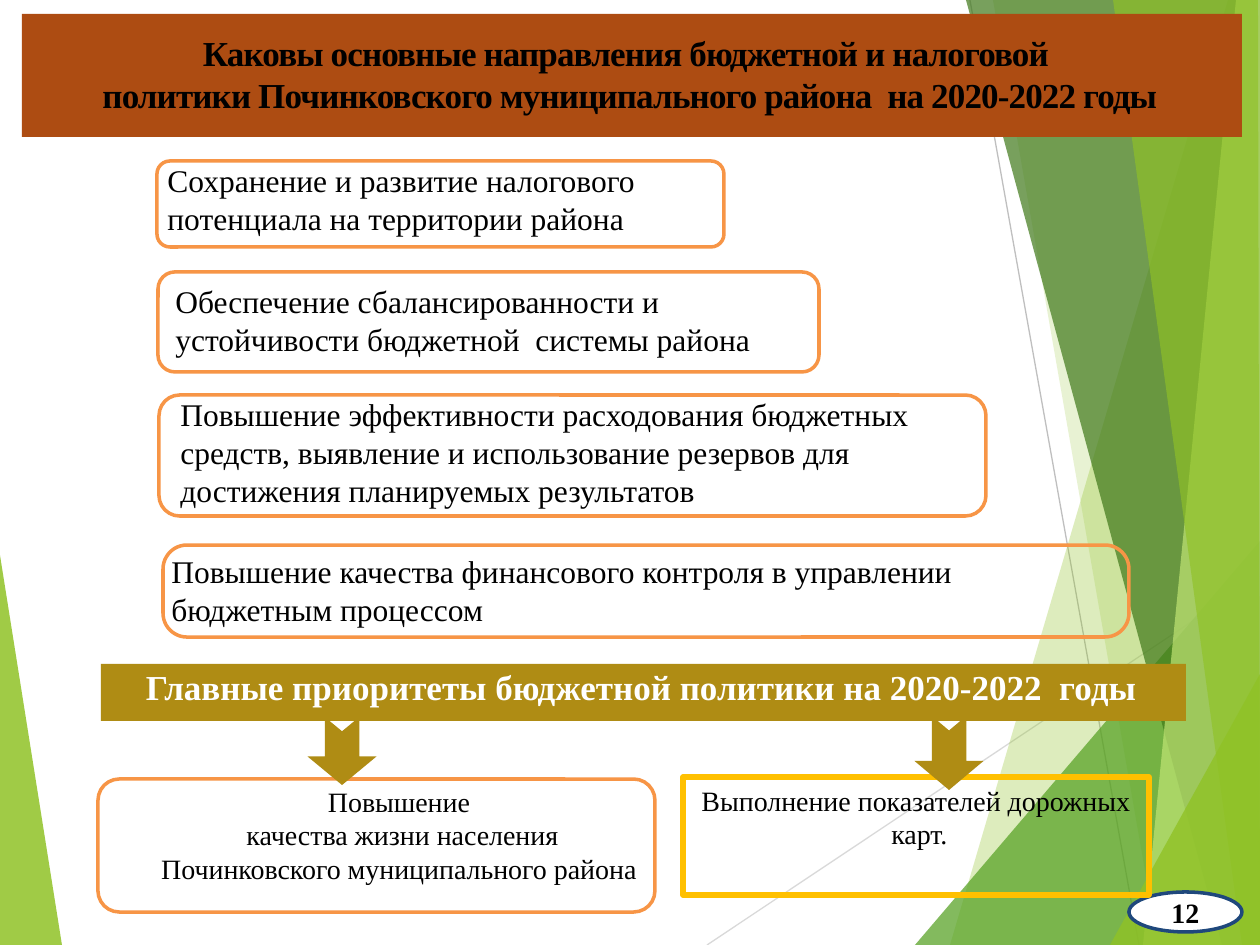
from dataclasses import dataclass

from lxml.etree import SubElement
from pptx import Presentation
from pptx.dml.color import RGBColor
from pptx.enum.shapes import MSO_CONNECTOR as Connector, MSO_SHAPE as Shape
from pptx.enum.text import MSO_ANCHOR as Anchor, PP_ALIGN as Align
from pptx.oxml.ns import qn
from pptx.util import Pt

PX = 914400 / 126
WIDTH, HEIGHT = 1260, 945


@dataclass(frozen=True)
class Theme:
    font: str = "Times New Roman"
    black: str = "000000"
    white: str = "FFFFFF"
    banner: str = "AD4C12"
    gold: str = "AF8C14"
    orange: str = "F79546"
    yellow: str = "FFC000"
    navy: str = "1F487C"
    heading: int = 20
    body: int = 18
    small: int = 16


THEME = Theme()

# Content: text, its box, its frame and the frame's corner radius
TITLE = ("Каковы основные направления бюджетной и налоговой\v"
         " политики Починковского муниципального района  на 2020-2022 годы")
DIRECTIONS = [
    ("Сохранение и развитие налогового потенциала на территории района",
     (155, 155, 630, 89), (157, 161, 567, 86), 13),
    ("Обеспечение сбалансированности и устойчивости бюджетной  системы района",
     (163, 276, 667, 89), (158, 272, 661, 100), 17),
    ("Повышение эффективности расходования бюджетных средств, выявление "
     "и использование резервов для достижения планируемых результатов",
     (168, 389, 809, 126), (159, 395, 827, 121), 21),
    ("Повышение качества финансового контроля в управлении бюджетным процессом",
     (159, 546, 954, 89), (163, 545, 966, 92), 24),
]
PRIORITIES = "Главные приоритеты бюджетной политики на 2020-2022  годы"
QUALITY = "Повышение\n качества жизни населения Починковского муниципального района"
ROADMAP = "Выполнение показателей дорожных\n карт."
PAGE_NUMBER = "12"

# Backdrop: colour, opacity in percent, corner points
FACETS = [
    ("90C226", 85, [(0, 555), (62, HEIGHT), (0, HEIGHT)]),
    ("90C226", 30, [(1228, 0), (950, HEIGHT), (WIDTH, HEIGHT), (WIDTH, 0)]),
    ("90C226", 20, [(993, 0), (1158, HEIGHT), (WIDTH, HEIGHT), (WIDTH, 0)]),
    ("54A021", 72, [(915, HEIGHT), (WIDTH, 541), (WIDTH, HEIGHT)]),
    ("3F7819", 70, [(966, 0), (1222, HEIGHT), (WIDTH, HEIGHT), (WIDTH, 0)]),
    ("C0E474", 70, [(1236, 0), (1143, HEIGHT), (WIDTH, HEIGHT), (WIDTH, 0)]),
    ("90C226", 65, [(1113, 0), (1242, HEIGHT), (WIDTH, HEIGHT), (1258, 0)]),
    ("90C226", 80, [(1110, HEIGHT), (WIDTH, 674), (WIDTH, HEIGHT)]),
]
RAYS = [("D9D9D9", (707, HEIGHT, WIDTH, 576)), ("BFBFBF", (970, 0, 1139, HEIGHT))]


def emu(*lengths):
    return [round(length * PX) for length in lengths]


def paint(shape, fill=None, line=None, weight=2.0):
    shape.shadow.inherit = False
    if fill:
        shape.fill.solid()
        shape.fill.fore_color.rgb = RGBColor.from_string(fill)
    else:
        shape.fill.background()
    if line:
        shape.line.color.rgb = RGBColor.from_string(line)
        shape.line.width = Pt(weight)
    else:
        shape.line.fill.background()


def add_preset(page, kind, place, **look):
    shape = page.shapes.add_shape(kind, *emu(*place))
    paint(shape, **look)
    return shape


def add_frame(page, place, radius):
    frame = add_preset(page, Shape.ROUNDED_RECTANGLE, place, line=THEME.orange)
    frame.adjustments[0] = round(radius / min(place[2:]), 2)


def add_facet(page, colour, opacity, points):
    builder = page.shapes.build_freeform(*points[0], scale=PX)
    builder.add_line_segments(points[1:], close=True)
    facet = builder.convert_to_shape()
    paint(facet, fill=colour)
    tint = facet.fill._xPr.find(f"{qn('a:solidFill')}/{qn('a:srgbClr')}")
    SubElement(tint, qn("a:alpha")).set("val", str(opacity * 1000))


def add_ray(page, colour, ends):
    ray = page.shapes.add_connector(Connector.STRAIGHT, *emu(*ends))
    ray.line.color.rgb = RGBColor.from_string(colour)
    ray.line.width = Pt(0.75)
    SubElement(ray._element.spPr, qn("a:effectLst"))


def add_arrow(page, centre, top, length, breadth=69):
    # The preset points right; a quarter turn makes it point down
    place = (centre - length / 2, top + (length - breadth) / 2, length, breadth)
    arrow = add_preset(page, Shape.NOTCHED_RIGHT_ARROW, place, fill=THEME.gold)
    arrow.adjustments[0], arrow.adjustments[1] = 0.5, 0.42
    arrow.rotation = 90


def write(shape, text, size=THEME.body, colour=THEME.black, bold=False,
          align=Align.LEFT, anchor=Anchor.TOP, margins=None, spacing=None):
    frame = shape.text_frame
    frame.word_wrap = True
    frame.vertical_anchor = anchor
    if margins is not None:
        (frame.margin_left, frame.margin_top,
         frame.margin_right, frame.margin_bottom) = emu(*margins)
    frame.text = text
    for para in frame.paragraphs:
        para.alignment = align
        for span in para.runs:
            span.font.name = THEME.font
            span.font.size = Pt(size)
            span.font.bold = bold
            span.font.color.rgb = RGBColor.from_string(colour)
            if spacing is not None:
                span.font._element.set("spc", str(round(spacing * 100)))


def add_text(page, place, text, **style):
    write(page.shapes.add_textbox(*emu(*place)), text, **style)


def main():
    deck = Presentation()
    deck.slide_width, deck.slide_height = emu(WIDTH, HEIGHT)
    page = deck.slides.add_slide(deck.slide_layouts[6])

    # Backdrop
    add_facet(page, *FACETS[0])
    for ray in RAYS:
        add_ray(page, *ray)
    for facet in FACETS[1:]:
        add_facet(page, *facet)

    # Title banner
    add_preset(page, Shape.RECTANGLE, (22, 14, 1220, 123), fill=THEME.banner)
    add_text(page, (0, 32, 1251, 84), TITLE, size=THEME.heading, bold=True,
             align=Align.CENTER, margins=(0, 0, 0, 0), spacing=-0.5)

    # Policy directions
    for text, place, frame, radius in DIRECTIONS:
        add_frame(page, frame, radius)
        add_text(page, place, text)

    # Page number
    badge = add_preset(page, Shape.OVAL, (1129, 892, 113, 40),
                       fill=THEME.white, line=THEME.navy)
    write(badge, PAGE_NUMBER, size=THEME.small, bold=True, align=Align.CENTER,
          anchor=Anchor.MIDDLE, margins=(0, 0, 0, 0))

    # Priorities
    bar = add_preset(page, Shape.RECTANGLE, (101, 664, 1085, 57), fill=THEME.gold)
    write(bar, PRIORITIES, size=THEME.heading, colour=THEME.white, bold=True,
          margins=(45, 2, 0, 0))
    add_frame(page, (98, 779, 557, 133), 21)
    add_text(page, (136, 778, 526, 152), QUALITY, size=THEME.small, align=Align.CENTER)
    roadmap = add_preset(page, Shape.RECTANGLE, (683, 777, 466, 118),
                         line=THEME.yellow, weight=3)
    write(roadmap, ROADMAP, size=THEME.small, align=Align.CENTER)
    add_arrow(page, 342, 717, 68)
    add_arrow(page, 949, 716, 74)

    deck.save("out.pptx")


if __name__ == "__main__":
    main()
